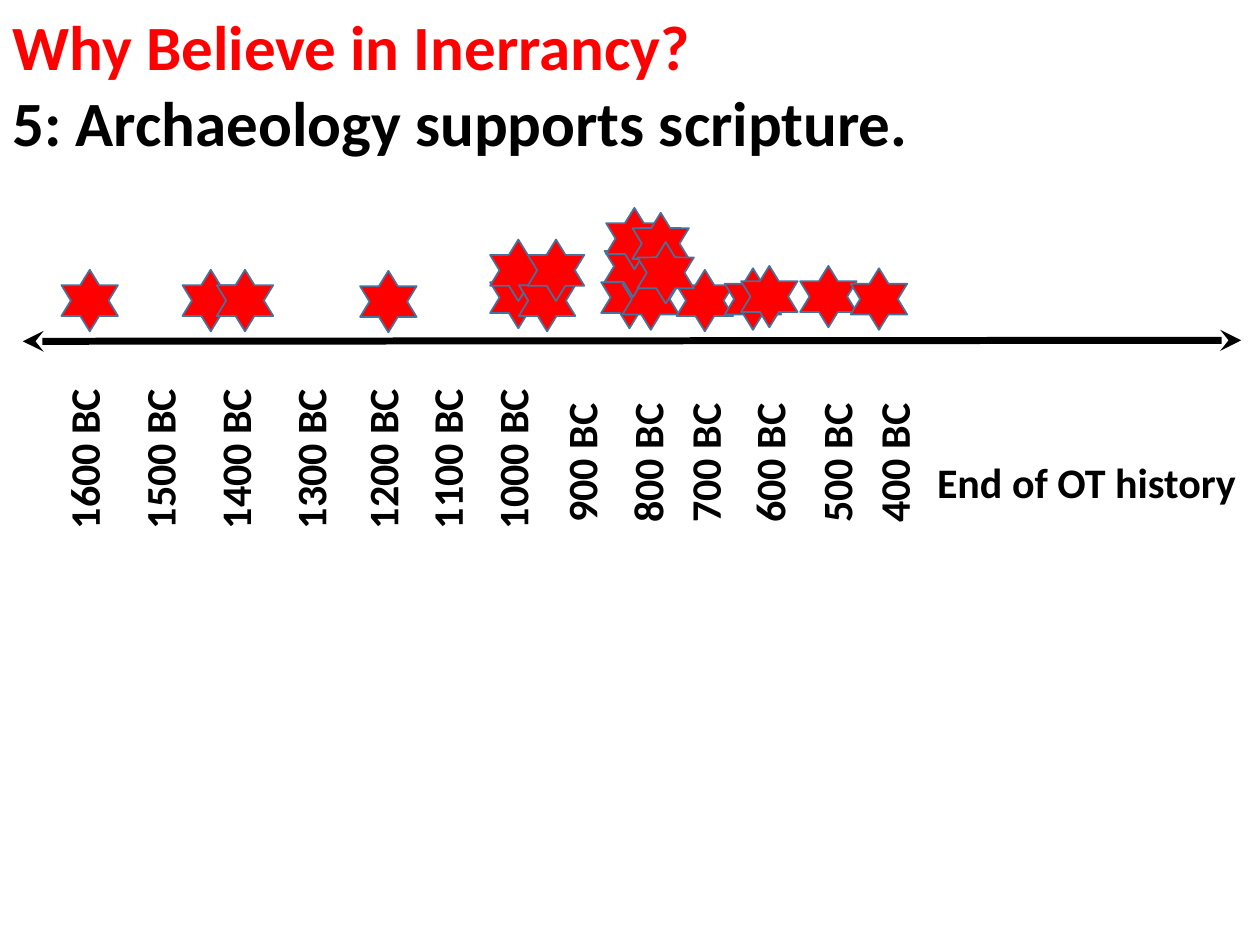
from lxml import etree
from pptx import Presentation
from pptx.dml.color import RGBColor
from pptx.enum.shapes import MSO_CONNECTOR, MSO_SHAPE
from pptx.oxml.ns import qn
from pptx.util import Cm, Pt

STAR = MSO_SHAPE.STAR_6_POINT
STRAIGHT = MSO_CONNECTOR.STRAIGHT

RED, BLACK, STAR_EDGE = "FF0000", "000000", "43739E"

LABEL_LEFTS = [1.04, 2.57, 4.09, 5.61, 7.06, 8.36, 9.68,
               11.07, 12.4, 13.56, 14.86, 16.21, 17.37]

# Left and top of each find, in centimetres, from back to front
FINDS = [
    (1.24, 5.44), (3.68, 5.44), (4.37, 5.44), (7.26, 5.46),
    (9.88, 5.38), (9.88, 4.83), (10.46, 5.44), (10.64, 4.83),
    (12.12, 5.38), (12.55, 5.41), (12.19, 4.75), (12.22, 4.19),
    (12.75, 4.29), (13.64, 5.44), (14.61, 5.41), (14.94, 5.36),
    (16.13, 5.36), (17.15, 5.41), (12.85, 4.88),
]


def color(value):
    return RGBColor.from_string(value)


def add_text(slide, text, left, top, width, height, size=24,
             colors=(BLACK,), vertical=False):
    """Add a bold text box with one colour per line of text."""
    shape = slide.shapes.add_textbox(Cm(left), Cm(top), Cm(width), Cm(height))
    frame = shape.text_frame
    frame.word_wrap = True
    frame.text = text
    if vertical:
        frame._txBody.bodyPr.set("vert", "vert270")
    for paragraph, line_color in zip(frame.paragraphs, colors):
        font = paragraph.runs[0].font
        font.name = "Calibri"
        font.size = Pt(size)
        font.bold = True
        font.color.rgb = color(line_color)


def add_time_axis(slide):
    axis = slide.shapes.add_connector(STRAIGHT, Cm(0.46), Cm(6.88),
                                      Cm(25.02), Cm(6.86))
    axis.line.color.rgb = color(BLACK)
    axis.line.width = Pt(4)
    line = axis.line._get_or_add_ln()
    for end in ("a:headEnd", "a:tailEnd"):
        etree.SubElement(line, qn(end), type="stealth")
    etree.SubElement(axis._element.spPr, qn("a:effectLst"))


def add_year_labels(slide):
    for year, left in zip(range(1600, 300, -100), LABEL_LEFTS):
        top = 7.19 if year >= 1000 else 7.06
        add_text(slide, f"{year} BC", left, top, 1.55, 3.73, vertical=True)


def add_star(slide, left, top):
    star = slide.shapes.add_shape(STAR, Cm(left), Cm(top), Cm(1.14), Cm(1.24))
    star.shadow.inherit = False
    star.fill.solid()
    star.fill.fore_color.rgb = color(RED)
    star.line.color.rgb = color(STAR_EDGE)
    star.line.width = Pt(1)


def main():
    presentation = Presentation()
    presentation.slide_width = Cm(25.4)
    presentation.slide_height = Cm(19.05)
    slide = presentation.slides.add_slide(presentation.slide_layouts[6])

    add_time_axis(slide)
    add_year_labels(slide)
    for left, top in FINDS:
        add_star(slide, left, top)
    add_text(slide, "End of OT history", 18.64, 9.07, 6.76, 1.27)
    add_text(slide,
             "Why Believe in Inerrancy?\n5: Archaeology supports scripture.",
             0, 0.03, 25.4, 4.88, size=36, colors=(RED, BLACK))

    presentation.save("out.pptx")


if __name__ == "__main__":
    main()
